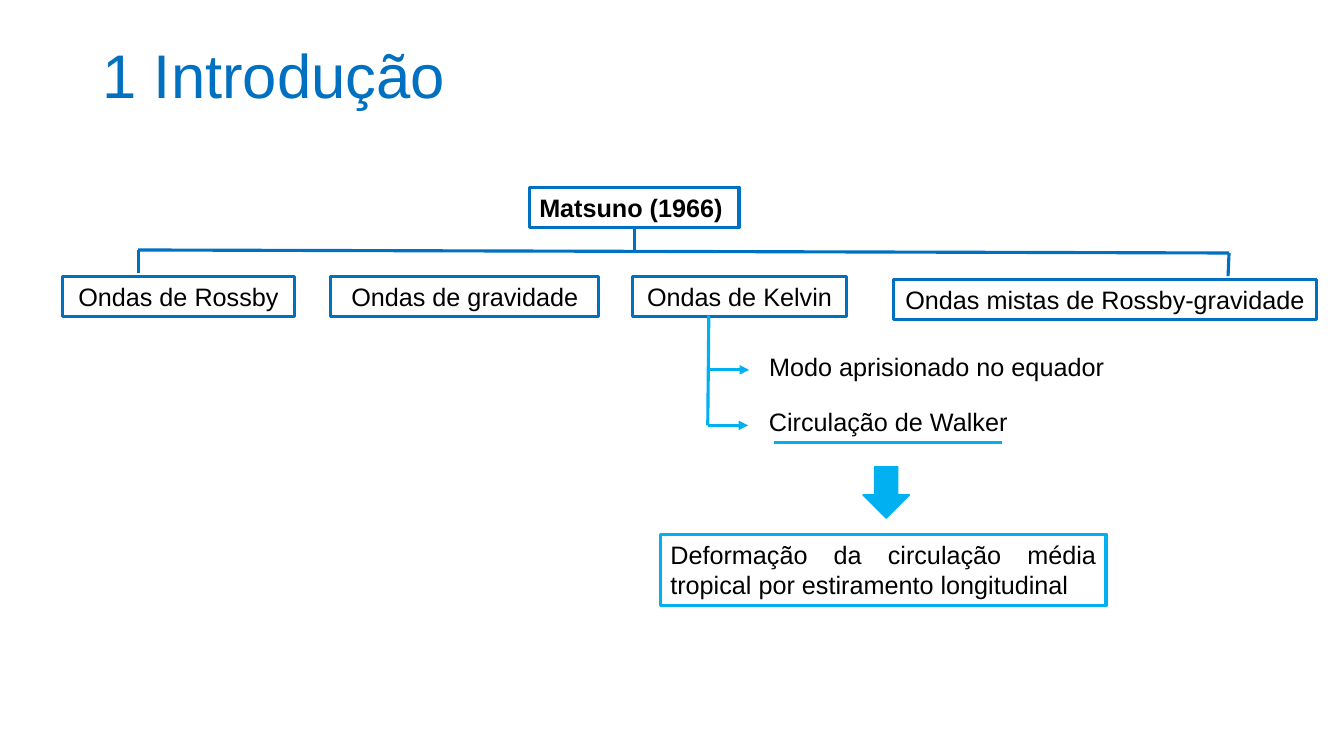
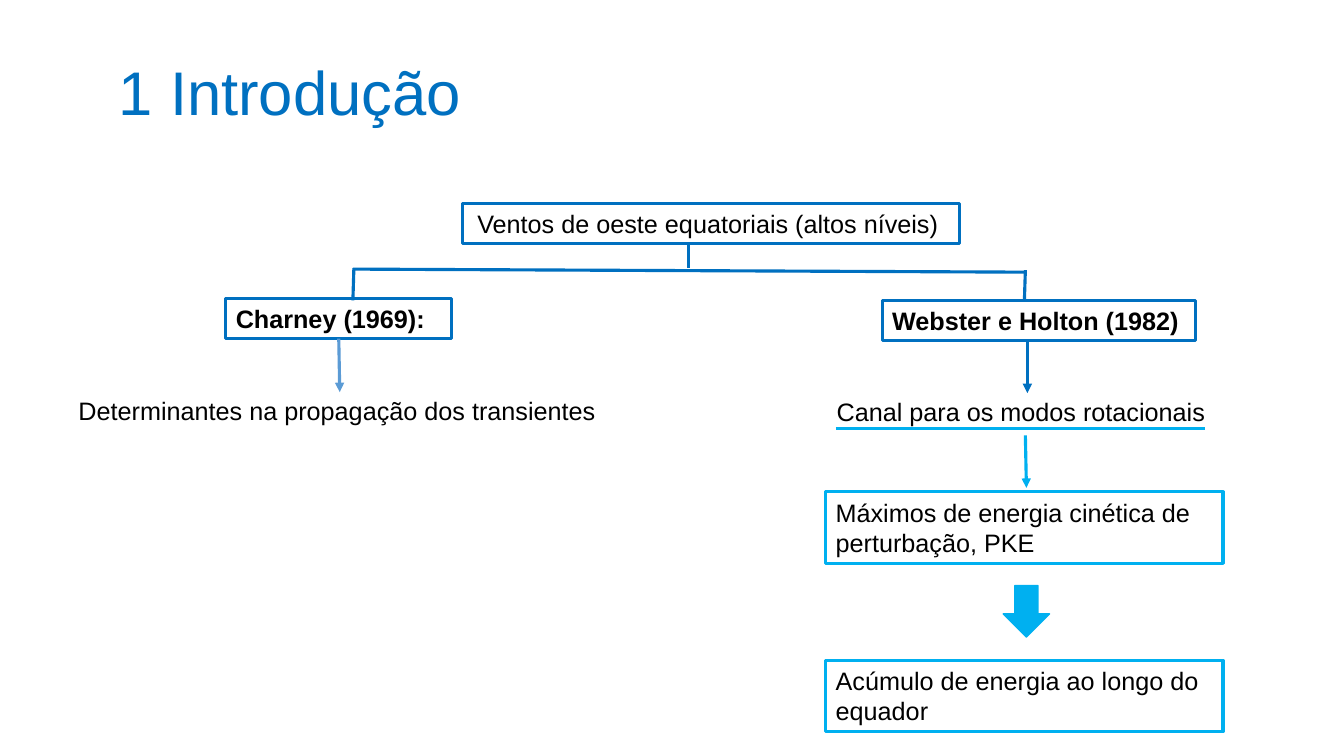
"""Builds two introduction slides on equatorial waves and westerly winds."""
from lxml import etree
from pptx import Presentation
from pptx.dml.color import RGBColor
from pptx.enum.shapes import MSO_CONNECTOR, MSO_SHAPE
from pptx.enum.text import MSO_ANCHOR, PP_ALIGN as Align
from pptx.oxml.ns import qn
from pptx.util import Pt

PX = 9144
FONT = "Arial"
BLUE = RGBColor(0x00, 0x70, 0xC0)
SKY = RGBColor(0x00, 0xB0, 0xF0)
STEEL = RGBColor(0x5B, 0x9B, 0xD5)
BLACK = RGBColor(0x00, 0x00, 0x00)
LINE_WIDTH = Pt(2.25)
LEFT, CENTER, JUSTIFY = Align.LEFT, Align.CENTER, Align.JUSTIFY


def add_text(page, text, place, align=LEFT, border=None, size=18, color=BLACK, bold=False):
    box = page.shapes.add_textbox(*[length * PX for length in place])
    if border is not None:
        box.line.color.rgb = border
        box.line.width = LINE_WIDTH
    frame = box.text_frame
    frame.word_wrap = True
    frame.text = text
    para = frame.paragraphs[0]
    para.alignment = align
    font = para.runs[0].font
    font.name, font.size, font.bold = FONT, Pt(size), bold
    font.color.rgb = color
    return box


def add_line(page, ends, color, arrow=False):
    line = page.shapes.add_connector(MSO_CONNECTOR.STRAIGHT, *[length * PX for length in ends])
    line.line.color.rgb = color
    line.line.width = LINE_WIDTH
    if arrow:
        etree.SubElement(line.line._get_or_add_ln(), qn("a:tailEnd"), type="triangle")
    etree.SubElement(line._element.spPr, qn("a:effectLst"))


deck = Presentation()
deck.slide_width, deck.slide_height = 1333 * PX, 750 * PX

waves = {
    "title": (92, 40),
    "heads": [("Matsuno (1966)", (525, 186, 208, 40))],
    "boxes": [
        ("Ondas de Rossby", (62, 274, 230, 40), CENTER, BLUE),
        ("Ondas de gravidade", (328, 274, 266, 40), CENTER, BLUE),
        ("Ondas de Kelvin", (627, 274, 213, 40), CENTER, BLUE),
        ("Ondas mistas de Rossby-gravidade", (886, 277, 420, 40), CENTER, BLUE),
        ("Modo aprisionado no equador", (750, 344, 358, 40), CENTER, None),
        ("Circulação de Walker", (730, 398, 302, 40), CENTER, None),
        ("Deformação da circulação média tropical por estiramento longitudinal",
         (655, 530, 442, 71), JUSTIFY, SKY),
    ],
    "lines": [
        ((629, 226, 629, 249), BLUE),
        ((137, 248, 1219, 251), BLUE),
        ((137, 248, 137, 271), BLUE),
        ((1219, 251, 1218, 274), BLUE),
        ((703, 313, 702, 422), SKY),
        ((768, 439, 994, 439), SKY),
    ],
    "arrows": [((702, 367, 743, 367), SKY), ((702, 422, 742, 422), SKY)],
    "down_arrow": (856, 463),
}

winds = {
    "title": (108, 57),
    "heads": [
        ("Charney (1969):", (224, 296, 224, 40)),
        ("Webster e Holton (1982)", (875, 298, 311, 40)),
    ],
    "boxes": [
        ("Ventos de oeste equatoriais (altos níveis) ", (459, 202, 493, 40), CENTER, BLUE),
        ("Determinantes na propagação dos transientes", (68, 387, 631, 40), LEFT, None),
        ("Canal para os modos rotacionais", (820, 388, 394, 40), LEFT, None),
        ("Máximos de energia cinética de perturbação, PKE", (819, 488, 394, 71), LEFT, SKY),
        ("Acúmulo de energia ao longo do equador", (819, 655, 394, 71), LEFT, SKY),
    ],
    "lines": [
        ((683, 243, 683, 266), BLUE),
        ((350, 267, 1017, 270), BLUE),
        ((351, 266, 350, 298), BLUE),
        ((1017, 268, 1016, 299), BLUE),
        ((829, 425, 1195, 425), SKY),
    ],
    "arrows": [
        ((336, 336, 337, 389), STEEL),
        ((1019, 338, 1019, 390), BLUE),
        ((1017, 432, 1018, 484), SKY),
    ],
    "down_arrow": (995, 581),
}

for content in (waves, winds):
    page = deck.slides.add_slide(deck.slide_layouts[6])

    title = add_text(page, "1 Introdução", (*content["title"], 1150, 76), size=44, color=BLUE)
    title.text_frame.vertical_anchor = MSO_ANCHOR.MIDDLE
    title.text_frame.paragraphs[0].line_spacing = 0.9

    for text, place in content["heads"]:
        add_text(page, text, place, border=BLUE, bold=True)
    for text, place, align, border in content["boxes"]:
        add_text(page, text, place, align, border)
    for ends, color in content["lines"]:
        add_line(page, ends, color)
    for ends, color in content["arrows"]:
        add_line(page, ends, color, arrow=True)

    left, top = content["down_arrow"]
    down_arrow = page.shapes.add_shape(MSO_SHAPE.DOWN_ARROW, left * PX, top * PX, 46 * PX, 51 * PX)
    down_arrow.shadow.inherit = False
    down_arrow.fill.solid()
    down_arrow.fill.fore_color.rgb = SKY
    down_arrow.line.color.rgb = SKY
    down_arrow.line.width = Pt(1)

deck.save("out.pptx")
